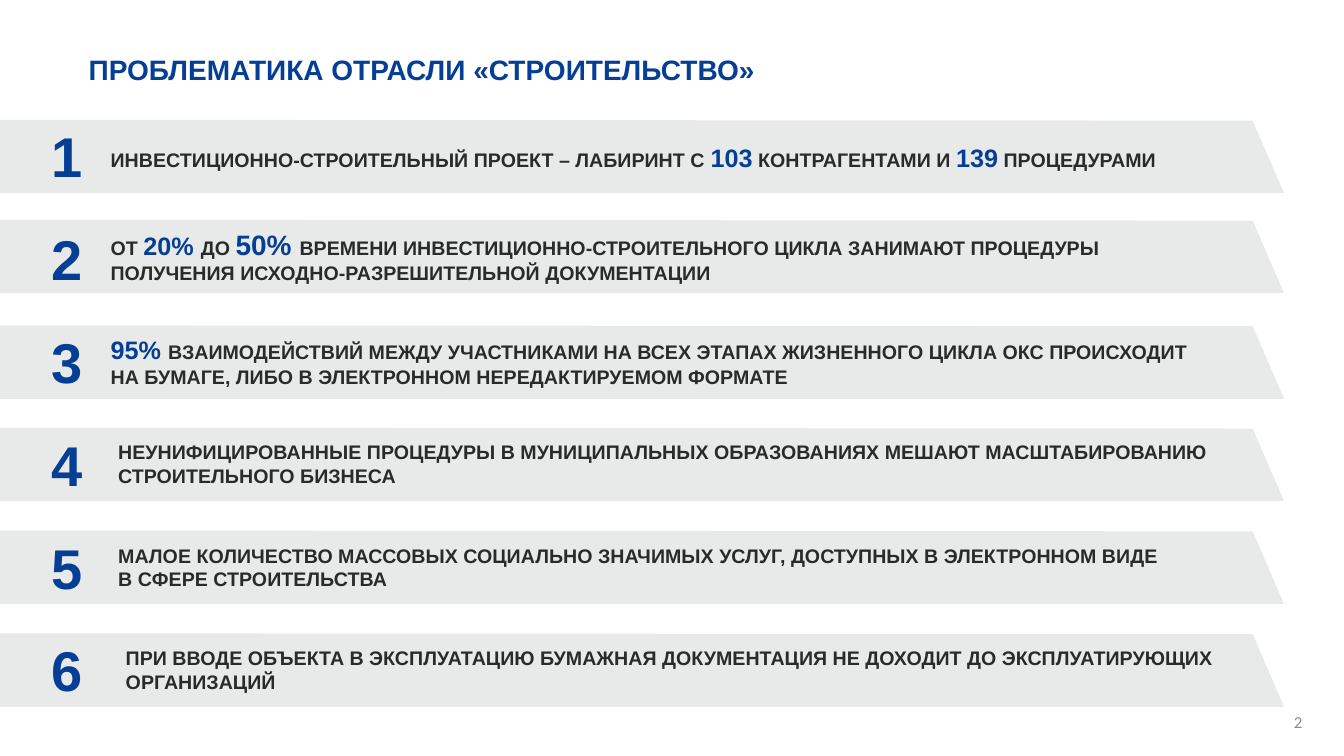
from pptx import Presentation, util as u
from pptx.dml.color import RGBColor
from pptx.enum import text


def rgb(value):
    """Turn a hex string into a colour."""
    return RGBColor.from_string(value)


class Deck:
    """Holds the style and the current slide."""

    BLUE, DARK, GREY, BAND = "053E95", "292A2B", "8C8C8C", "E8EAE9"
    FONT = "Arial"

    def __init__(self):
        """Open a widescreen deck with one title-only slide."""
        self.prs = Presentation()
        self.prs.slide_width, self.prs.slide_height = u.Cm(33.87), u.Cm(19.05)
        self.s = self.prs.slides.add_slide(self.prs.slide_layouts[5])

    def style(self, r, size, color, bold=True, font=FONT):
        """Format one run."""
        r.font.size, r.font.bold, r.font.name = u.Pt(size), bold, font
        r.font.color.rgb = rgb(color)

    def title(self, wording, left, top, width, height):
        """Place and format the title placeholder."""
        sp = self.s.shapes.title
        sp.left, sp.top, sp.width, sp.height = map(u.Cm, (left, top, width, height))
        tf = sp.text_frame
        tf.text = wording
        tf.vertical_anchor = text.MSO_ANCHOR.MIDDLE
        p = tf.paragraphs[0]
        p.alignment, p.line_spacing = text.PP_ALIGN.LEFT, 0.9
        self.style(p.runs[0], 20, self.BLUE)

    def band(self, top):
        """Draw a grey band with a slanted right end."""
        points = [(31.57, top + 0.02), (32.36, top + 1.85), (0, top + 1.85)]
        fb = self.s.shapes.build_freeform(0, u.Cm(top))
        fb.add_line_segments([(u.Cm(x), u.Cm(y)) for x, y in points], close=True)
        sp = fb.convert_to_shape()
        sp.shadow.inherit = False
        sp.fill.solid()
        sp.fill.fore_color.rgb = rgb(self.BAND)
        sp.line.fill.background()

    def box(self, left, top, width, height, align=text.PP_ALIGN.LEFT):
        """Add a wrapping text box and return its paragraph."""
        sp = self.s.shapes.add_textbox(*map(u.Cm, (left, top, width, height)))
        tf = sp.text_frame
        tf.word_wrap = True
        tf.auto_size = text.MSO_AUTO_SIZE.SHAPE_TO_FIT_TEXT
        p = tf.paragraphs[0]
        p.alignment = align
        return p

    def label(self, wording, place, size, color, align, **look):
        """Add a text box with a single run."""
        p = self.box(*place, align)
        p.text = wording
        self.style(p.runs[0], size, color, **look)

    def statement(self, parts, place):
        """Add a statement whose enlarged figures are blue."""
        p = self.box(*place)
        for wording, size in parts:
            r = p.add_run()
            r.text = wording
            self.style(r, size, self.DARK if size == 14 else self.BLUE)


PROBLEMS = [
    (3.02, (2.54, 3.45, 27.56, 1.02), [
        ("ИНВЕСТИЦИОННО-СТРОИТЕЛЬНЫЙ ПРОЕКТ – ЛАБИРИНТ С ", 14), ("103", 18),
        (" КОНТРАГЕНТАМИ И ", 14), ("139", 18), (" ПРОЦЕДУРАМИ", 14)]),
    (5.54, (2.54, 5.61, 27.56, 1.7), [
        ("ОТ ", 14), ("20% ", 18), ("ДО ", 14), ("50% ", 20),
        ("ВРЕМЕНИ ИНВЕСТИЦИОННО-СТРОИТЕЛЬНОГО ЦИКЛА ЗАНИМАЮТ ПРОЦЕДУРЫ "
         "ПОЛУЧЕНИЯ ИСХОДНО-РАЗРЕШИТЕЛЬНОЙ ДОКУМЕНТАЦИИ", 14)]),
    (8.2, (2.54, 8.31, 28.4, 1.63), [
        ("95% ", 18),
        ("ВЗАИМОДЕЙСТВИЙ МЕЖДУ УЧАСТНИКАМИ НА ВСЕХ ЭТАПАХ ЖИЗНЕННОГО ЦИКЛА ОКС "
         "ПРОИСХОДИТ НА БУМАГЕ, ЛИБО В ЭЛЕКТРОННОМ НЕРЕДАКТИРУЕМОМ ФОРМАТЕ", 14)]),
    (10.78, (2.73, 10.97, 28.42, 1.45), [
        ("НЕУНИФИЦИРОВАННЫЕ ПРОЦЕДУРЫ В МУНИЦИПАЛЬНЫХ ОБРАЗОВАНИЯХ МЕШАЮТ "
         "МАСШТАБИРОВАНИЮ СТРОИТЕЛЬНОГО БИЗНЕСА", 14)]),
    (13.37, (2.73, 13.57, 26.8, 1.45), [
        ("МАЛОЕ КОЛИЧЕСТВО МАССОВЫХ СОЦИАЛЬНО ЗНАЧИМЫХ УСЛУГ, ДОСТУПНЫХ "
         "В ЭЛЕКТРОННОМ ВИДЕ В СФЕРЕ СТРОИТЕЛЬСТВА", 14)]),
    (15.96, (2.92, 16.16, 29.64, 1.45), [
        ("ПРИ ВВОДЕ ОБЪЕКТА В ЭКСПЛУАТАЦИЮ БУМАЖНАЯ ДОКУМЕНТАЦИЯ НЕ ДОХОДИТ "
         "ДО ЭКСПЛУАТИРУЮЩИХ ОРГАНИЗАЦИЙ", 14)]),
]


def main():
    """Build the slide and save it."""
    deck = Deck()
    deck.title("ПРОБЛЕМАТИКА ОТРАСЛИ «СТРОИТЕЛЬСТВО»", 1.98, 1.12, 19.43, 1.37)
    for i, (top, place, parts) in enumerate(PROBLEMS):
        deck.band(top)
        deck.statement(parts, place)
        deck.label(str(i + 1), (1.04, 2.95 + 2.59 * i, 0.99, 1.96), 40,
                   deck.BLUE, text.PP_ALIGN.CENTER)
    deck.label("2", (25.45, 17.8, 7.62, 0.76), 12, deck.GREY,
               text.PP_ALIGN.RIGHT, bold=False, font="Calibri")
    deck.prs.save("out.pptx")


if __name__ == "__main__":
    main()
